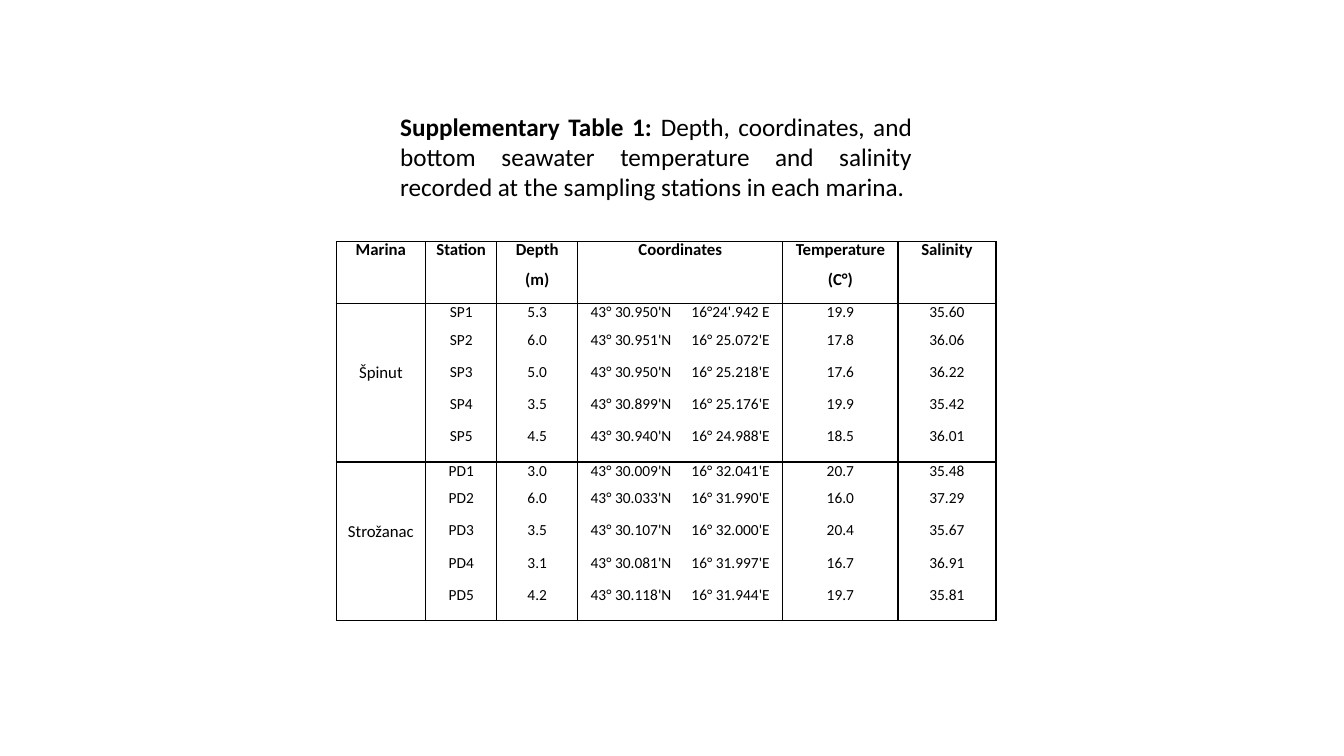
from lxml.etree import SubElement
from pptx import Presentation
from pptx.dml.color import RGBColor
from pptx.enum.text import MSO_ANCHOR, MSO_AUTO_SIZE, PP_ALIGN
from pptx.oxml.ns import qn
from pptx.util import Cm, Pt

BLACK = "000000"
HEADERS = ["Marina", "Station", "Depth\n(m)", "Coordinates",
           "Temperature\n(C°)", "Salinity"]
MARINAS = {
    "Špinut": [
        ("SP1", "5.3", "43° 30.950'N\t16°24'.942 E", "19.9", "35.60"),
        ("SP2", "6.0", "43° 30.951'N\t16° 25.072'E", "17.8", "36.06"),
        ("SP3", "5.0", "43° 30.950'N\t16° 25.218'E", "17.6", "36.22"),
        ("SP4", "3.5", "43° 30.899'N\t16° 25.176'E", "19.9", "35.42"),
        ("SP5", "4.5", "43° 30.940'N\t16° 24.988'E", "18.5", "36.01"),
    ],
    "Strožanac": [
        ("PD1", "3.0", "43° 30.009'N\t16° 32.041'E", "20.7", "35.48"),
        ("PD2", "6.0", "43° 30.033'N\t16° 31.990'E", "16.0", "37.29"),
        ("PD3", "3.5", "43° 30.107'N\t16° 32.000'E", "20.4", "35.67"),
        ("PD4", "3.1", "43° 30.081'N\t16° 31.997'E", "16.7", "36.91"),
        ("PD5", "4.2", "43° 30.118'N\t16° 31.944'E", "19.7", "35.81"),
    ],
}
COL_WIDTHS = [2.26, 1.79, 2.04, 5.17, 2.9, 2.47]
COL_INDENTS = [0.23, 0.2, 0.46, 0, 0.23, 0.5]
HEADER_HEIGHT = 1.56
STATION_HEIGHTS = [0.68, 0.81, 0.81, 0.81, 0.88]


def rgb(value):
    return RGBColor.from_string(value)


def add_run(p, text, size, bold=False):
    r = p.add_run()
    r.text = text
    r.font.name = "Calibri"
    r.font.size = Pt(size)
    r.font.bold = bold
    r.font.color.rgb = rgb(BLACK)


def set_indents(p, left, right):
    pPr = p._p.get_or_add_pPr()
    pPr.set("marL", str(Cm(left)))
    pPr.set("marR", str(Cm(right)))
    pPr.set("indent", "0")


def set_borders(cell, sides):
    """Draw the named sides (L, R, T, B) and hide the others."""
    tcPr = cell._tc.get_or_add_tcPr()
    for side in "LRTB":
        ln = SubElement(tcPr, qn(f"a:ln{side}"), w=str(Pt(1)))
        if side in sides:
            fill = SubElement(ln, qn("a:solidFill"))
            SubElement(fill, qn("a:srgbClr"), val=BLACK)
        else:
            SubElement(ln, qn("a:noFill"))


def fill_cell(cell, text, size, sides, indent, bold=False, tight=False):
    set_borders(cell, sides)
    cell.fill.background()
    cell.vertical_anchor = MSO_ANCHOR.TOP
    cell.margin_left = cell.margin_right = 0
    cell.margin_top = cell.margin_bottom = 0
    tf = cell.text_frame
    for i, line in enumerate(text.split("\n")):
        p = tf.add_paragraph() if i else tf.paragraphs[0]
        p.alignment = PP_ALIGN.CENTER
        set_indents(p, indent, indent)
        if i:
            p.space_before = Pt(6.7)
        elif tight:
            p.line_spacing = Pt(13.2)
        if "\t" in line:
            tabs = SubElement(p._p.get_or_add_pPr(), qn("a:tabLst"))
            SubElement(tabs, qn("a:tab"), pos=str(Cm(2.54)), algn="l")
        if line:
            add_run(p, line, size, bold)
        else:
            SubElement(p._p, qn("a:endParaRPr"), sz=str(size * 100))


def add_caption(s, left, top, width, height):
    sp = s.shapes.title
    sp.left, sp.top, sp.width, sp.height = Cm(left), Cm(top), Cm(width), Cm(height)
    tf = sp.text_frame
    tf.word_wrap = True
    tf.auto_size = MSO_AUTO_SIZE.NONE
    tf.vertical_anchor = MSO_ANCHOR.TOP
    p = tf.paragraphs[0]
    p.alignment = PP_ALIGN.JUSTIFY
    set_indents(p, 2.72, 4.22)
    add_run(p, "Supplementary Table 1: ", 18, bold=True)
    add_run(p, "Depth, coordinates, and bottom seawater temperature and salinity "
               "recorded at the sampling stations in each marina.", 18)


def add_station_table(s, left, top):
    heights = [HEADER_HEIGHT] + STATION_HEIGHTS * len(MARINAS)
    table = s.shapes.add_table(len(heights), len(COL_WIDTHS), Cm(left), Cm(top),
                               Cm(sum(COL_WIDTHS)), Cm(sum(heights))).table
    table.first_row = table.horz_banding = False
    for column, width in zip(table.columns, COL_WIDTHS):
        column.width = Cm(width)
    for row, height in zip(table.rows, heights):
        row.height = Cm(height)

    # Header row
    for col, text in enumerate(HEADERS):
        fill_cell(table.cell(0, col), text, 12, "LRTB", COL_INDENTS[col],
                  bold=True, tight=True)

    # One block of rows per marina, named on its middle row
    row = 1
    for marina, stations in MARINAS.items():
        last = len(stations) - 1
        for i, station in enumerate(stations):
            sides = "LR" + ("T" if i == 0 else "") + ("B" if i == last else "")
            name = marina if i == last // 2 else ""
            for col, text in enumerate((name, *station)):
                size = 12 if col == 0 and name else 11
                fill_cell(table.cell(row, col), text, size, sides,
                          COL_INDENTS[col], tight=i == 0)
            row += 1


def main():
    prs = Presentation()
    prs.slide_width, prs.slide_height = Cm(33.87), Cm(19.05)
    s = prs.slides.add_slide(prs.slide_layouts[5])
    add_caption(s, 7.11, 2.67, 20.35, 2.57)
    add_station_table(s, 8.47, 6.09)
    prs.save("out.pptx")


if __name__ == "__main__":
    main()
